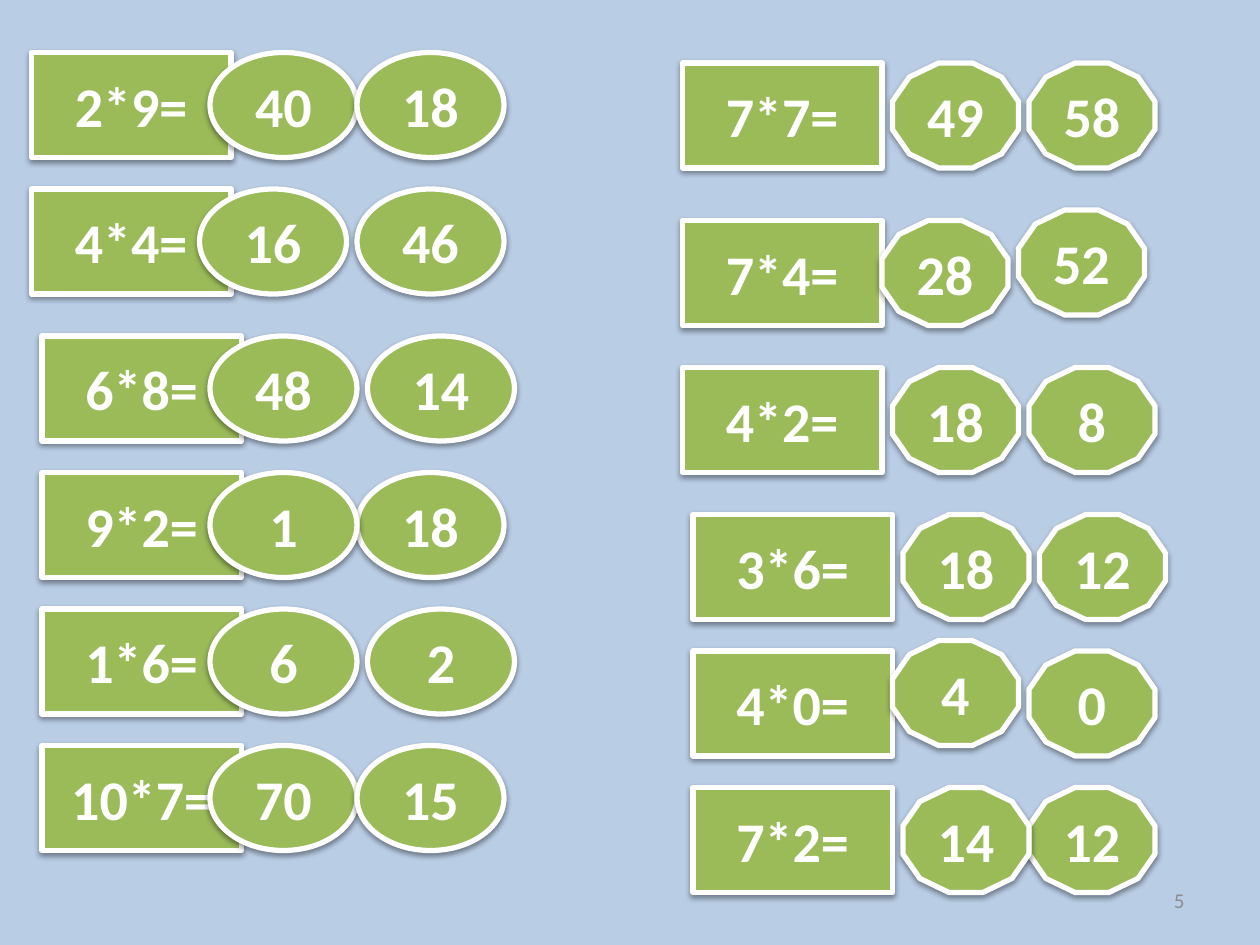
from lxml.etree import SubElement
from pptx import Presentation
from pptx.dml.color import RGBColor
from pptx.enum.shapes import MSO_SHAPE as Shape
from pptx.enum.text import MSO_ANCHOR as Anchor, PP_ALIGN as Align
from pptx.oxml.ns import qn
from pptx.util import Pt

PX = 9525
SKY = RGBColor(0xB9, 0xCD, 0xE5)
GREEN = RGBColor(0x9B, 0xBB, 0x59)
WHITE = RGBColor(0xFF, 0xFF, 0xFF)
GREY = RGBColor(0x8C, 0x8C, 0x8C)
FONT = "Calibri"
CARD_HEIGHT, QUESTION_WIDTH = 80, 152

# Each row: top, question left, question, answers as (left, lift, text) from back to front.
OVAL_ROWS = [
    (40, 24, "2*9=", [(160, 0, "40"), (272, 0, "18")]),
    (144, 24, "4*4=", [(152, 0, "16"), (272, 0, "46")]),
    (256, 32, "6*8=", [(160, 0, "48"), (280, 0, "14")]),
    (360, 32, "9*2=", [(272, 0, "18"), (160, 0, "1")]),
    (464, 32, "1*6=", [(160, 0, "6"), (280, 0, "2")]),
    (568, 32, "10*7=", [(160, 0, "70"), (272, 0, "15")]),
]
DODECAGON_ROWS = [
    (48, 520, "7*7=", [(680, 0, "49"), (784, 0, "58")]),
    (168, 520, "7*4=", [(672, 0, "28"), (776, 8, "52")]),
    (280, 520, "4*2=", [(680, 0, "18"), (784, 0, "8")]),
    (392, 528, "3*6=", [(688, 0, "18"), (792, 0, "12")]),
    (496, 528, "4*0=", [(680, 8, "4"), (784, 0, "0")]),
    (600, 528, "7*2=", [(784, 0, "12"), (688, 0, "14")]),
]
COLUMNS = [
    (OVAL_ROWS, Shape.OVAL, 112),
    (DODECAGON_ROWS, Shape.DODECAGON, 96),
]
PAGE_NUMBER = "5"


def write(shape, text, size, color, align, bold=False):
    frame = shape.text_frame
    frame.word_wrap = True
    frame.vertical_anchor = Anchor.MIDDLE
    paragraph = frame.paragraphs[0]
    paragraph.alignment = align
    run = paragraph.add_run()
    run.text = text
    run.font.name = FONT
    run.font.size = Pt(size)
    run.font.bold = bold
    run.font.color.rgb = color


def add_shadow(shape):
    shape.shadow.inherit = False
    effects = shape._element.spPr.find(qn("a:effectLst"))
    shadow = SubElement(effects, qn("a:outerShdw"), blurRad="40000",
                        dist="20000", dir="5400000", rotWithShape="0")
    black = SubElement(shadow, qn("a:srgbClr"), val="000000")
    SubElement(black, qn("a:alpha"), val="38000")


def add_card(slide, kind, left, top, width, text):
    card = slide.shapes.add_shape(
        kind, left * PX, top * PX, width * PX, CARD_HEIGHT * PX)
    card.fill.solid()
    card.fill.fore_color.rgb = GREEN
    card.line.color.rgb = WHITE
    card.line.width = Pt(3)
    add_shadow(card)
    write(card, text, 32, WHITE, Align.CENTER, bold=True)


def main():
    deck = Presentation()
    deck.slide_width, deck.slide_height = 960 * PX, 720 * PX
    slide = deck.slides.add_slide(deck.slide_layouts[6])
    slide.background.fill.solid()
    slide.background.fill.fore_color.rgb = SKY

    for rows, answer_kind, answer_width in COLUMNS:
        for top, question_left, question, answers in rows:
            add_card(slide, Shape.RECTANGLE, question_left, top, QUESTION_WIDTH, question)
            for left, lift, answer in answers:
                add_card(slide, answer_kind, left, top - lift, answer_width, answer)

    page = slide.shapes.add_textbox(688 * PX, 667 * PX, 224 * PX, 38 * PX)
    write(page, PAGE_NUMBER, 12, GREY, Align.RIGHT)
    deck.save("out.pptx")


if __name__ == "__main__":
    main()
